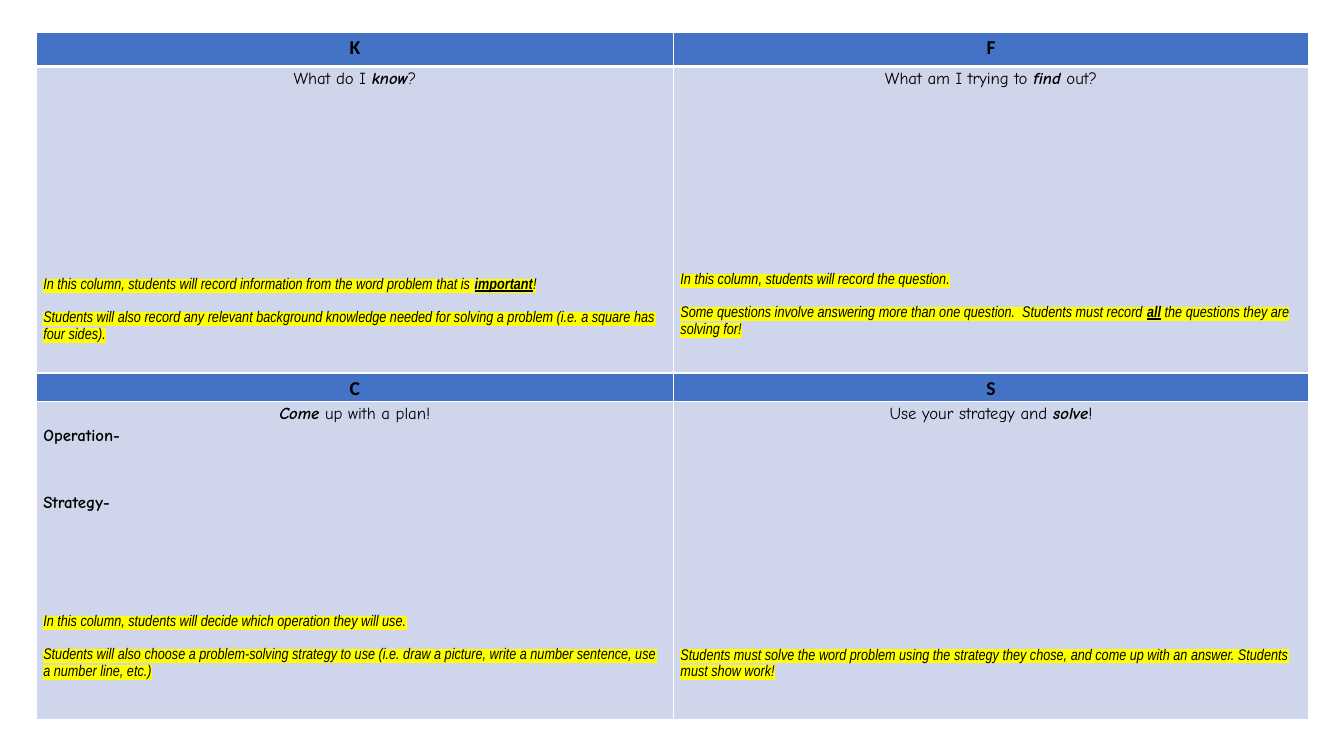
from lxml.etree import SubElement
from pptx import Presentation
from pptx.dml.color import RGBColor
from pptx.enum.text import PP_ALIGN
from pptx.oxml.ns import qn
from pptx.util import Inches, Pt

# Content: each paragraph is (style, space before in points, runs).
# A run is (text, emphasis): "b" bold, "i" italic, "u" underlined.
KNOW = [
    ("prompt", 0, [("What do I ", ""), ("know", "bi"), ("?", "")]),
    ("note", 134, [
        ("In this column, students will record information from the word problem that is ", ""),
        ("important", "bu"), ("!", "")]),
    ("note", 11.7, [
        ("Students will also record any relevant background knowledge needed for "
         "solving a problem (i.e. a square has four sides).", "")]),
]
FIND = [
    ("prompt", 0, [("What am I trying to ", ""), ("find", "bi"), (" out?", "")]),
    ("note", 130.5, [("In this column, students will record the question.", "")]),
    ("note", 11.7, [
        ("Some questions involve answering more than one question.  Students must record ", ""),
        ("all", "bu"), (" the questions they are solving for!", "")]),
]
COME = [
    ("prompt", 0, [("Come", "bi"), (" up with a plan!", "")]),
    ("label", 0, [("Operation-", "")]),
    ("label", 32, [("Strategy-", "")]),
    ("note", 72, [("In this column, students will decide which operation they will use.", "")]),
    ("note", 11.7, [
        ("Students will also choose a problem-solving strategy to use (i.e. draw a "
         "picture, write a number sentence, use a number line, etc.)", "")]),
]
SOLVE = [
    ("prompt", 0, [("Use your strategy and ", ""), ("solve", "bi"), ("!", "")]),
    ("note", 159.5, [
        ("Students must solve the word problem using the strategy they chose, and "
         "come up with an answer. Students must show work!", "")]),
]


def heading(letter):
    return [("heading", 0, [(letter, "")])]


GRID = [
    [heading("K"), heading("F")],
    [KNOW, FIND],
    [heading("C"), heading("S")],
    [COME, SOLVE],
]

# Style: font, size, bold, italic, alignment, highlight
STYLES = {
    "heading": ("Calibri", 14, True, False, PP_ALIGN.CENTER, None),
    "prompt": ("Comic Neue", 12, False, False, PP_ALIGN.CENTER, None),
    "label": ("Comic Neue", 12, True, False, PP_ALIGN.LEFT, None),
    "note": ("Arial Narrow", 11, False, True, PP_ALIGN.LEFT, "FFFF00"),
}
BLACK, WHITE, BLUE, PALE = "000000", "FFFFFF", "4472C4", "CFD5EA"
LEFT, TOP = 0.36, 0.32
COLUMNS = [6.32, 6.3]
ROWS = [0.34, 3.04, 0.28, 3.16]


def color(value):
    return RGBColor.from_string(value)


def add_highlight(run, value):
    properties = run.font._element if hasattr(run.font, "_element") else run._r.get_or_add_rPr()
    highlight = SubElement(properties, qn("a:highlight"))
    SubElement(highlight, qn("a:srgbClr"), val=value)


def add_border(cell, side, points):
    line = SubElement(cell._tc.get_or_add_tcPr(), qn("a:ln" + side), w=str(Pt(points)))
    fill = SubElement(line, qn("a:solidFill"))
    SubElement(fill, qn("a:srgbClr"), val=WHITE)


def write_paragraph(paragraph, style, space_before, runs):
    name, size, bold, italic, alignment, highlight = STYLES[style]
    paragraph.alignment = alignment
    paragraph.line_spacing = 1.15
    paragraph.space_before = Pt(space_before)
    font = paragraph.font
    font.name, font.size, font.bold, font.italic = name, Pt(size), bold, italic
    font.color.rgb = color(BLACK)
    for text, emphasis in runs:
        run = paragraph.add_run()
        run.text = text
        if "b" in emphasis:
            run.font.bold = True
        if "i" in emphasis:
            run.font.italic = True
        if "u" in emphasis:
            run.font.underline = True
        if highlight:
            add_highlight(run, highlight)


def fill_cell(cell, row, paragraphs):
    # Borders go before the fill; the rule under the first row is thicker
    for side in "LRTB":
        thick = (row, side) in ((0, "B"), (1, "T"))
        add_border(cell, side, 3 if thick else 1)
    cell.fill.solid()
    cell.fill.fore_color.rgb = color(PALE if row % 2 else BLUE)
    cell.margin_left = cell.margin_right = Inches(0.07)
    cell.margin_top = cell.margin_bottom = 0
    frame = cell.text_frame
    for index, content in enumerate(paragraphs):
        paragraph = frame.add_paragraph() if index else frame.paragraphs[0]
        write_paragraph(paragraph, *content)


def main():
    presentation = Presentation()
    presentation.slide_width, presentation.slide_height = Inches(13.33), Inches(7.5)
    slide = presentation.slides.add_slide(presentation.slide_layouts[6])

    # Four-part problem-solving chart
    table = slide.shapes.add_table(
        len(ROWS), len(COLUMNS), Inches(LEFT), Inches(TOP),
        Inches(sum(COLUMNS)), Inches(sum(ROWS))).table
    table.first_row = table.horz_banding = False
    for column, width in zip(table.columns, COLUMNS):
        column.width = Inches(width)
    for row, height in zip(table.rows, ROWS):
        row.height = Inches(height)
    for row, cells in enumerate(GRID):
        for column, paragraphs in enumerate(cells):
            fill_cell(table.cell(row, column), row, paragraphs)

    presentation.save("out.pptx")


if __name__ == "__main__":
    main()
